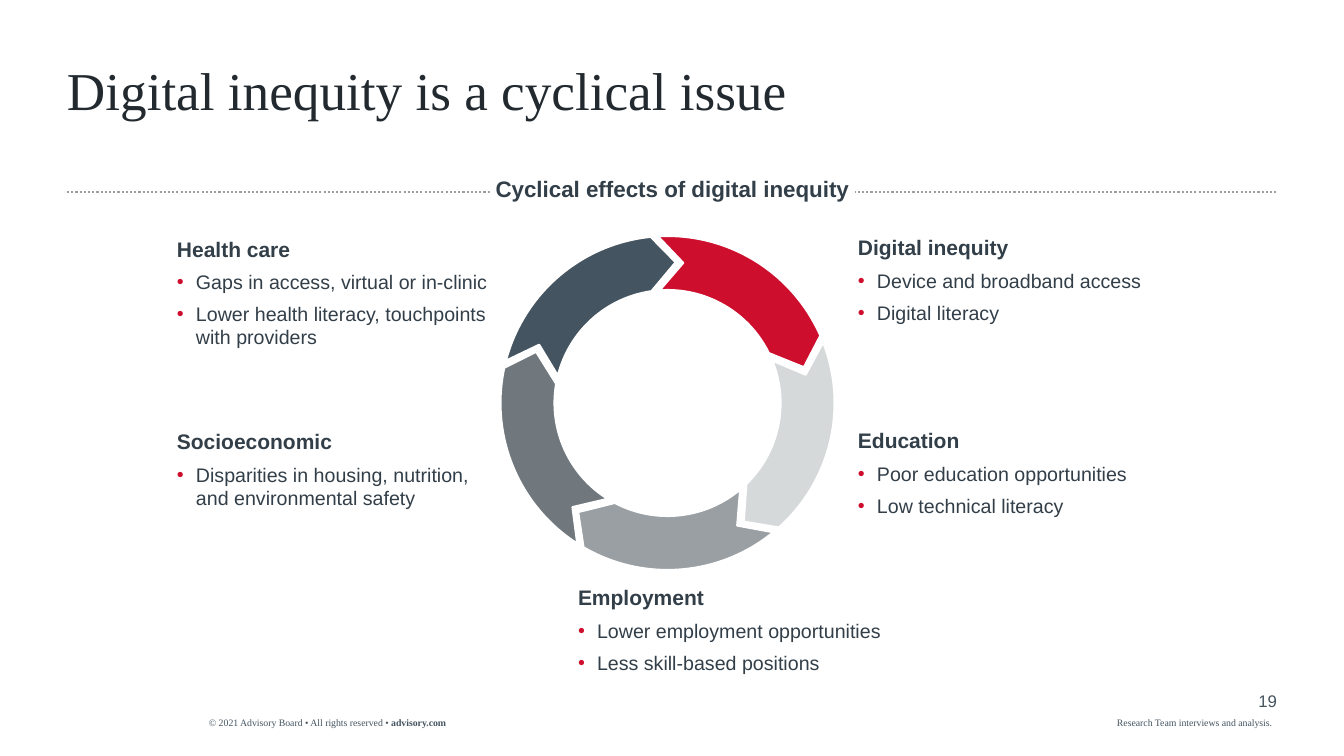
from math import cos, radians, sin, tan

from lxml.etree import SubElement
from pptx import Presentation
from pptx.dml.color import RGBColor
from pptx.enum.dml import MSO_LINE_DASH_STYLE as Dash
from pptx.enum.shapes import MSO_CONNECTOR as Connector, MSO_SHAPE as Shape
from pptx.enum.text import MSO_ANCHOR as Anchor, MSO_AUTO_SIZE as AutoSize, PP_ALIGN as Align
from pptx.oxml.ns import qn
from pptx.util import Pt

# Content
TITLE = "Digital inequity is a cyclical issue"
HEADING = "Cyclical effects of digital inequity"
COPYRIGHT = [("© 2021 Advisory Board • All rights reserved • ", False), ("advisory.com", True)]
SOURCE = [("Research Team interviews and analysis.", False)]
PAGE = [("19", False)]

# Stages clockwise from the top: name, colour, (left, top, width, height), effects
STAGES = [
    ("Digital inequity", "red", (858, 235, 305, 90),
     ["Device and broadband access", "Digital literacy"]),
    ("Education", "light", (858, 428, 311, 90),
     ["Poor education opportunities", "Low technical literacy"]),
    ("Employment", "mid", (578, 585, 336, 90),
     ["Lower employment opportunities", "Less skill-based positions"]),
    ("Socioeconomic", "dark", (177, 429, 314, 82),
     ["Disparities in housing, nutrition, and environmental safety"]),
    ("Health care", "slate", (177, 236, 334, 114),
     ["Gaps in access, virtual or in-clinic",
      "Lower health literacy, touchpoints with providers"]),
]

COLORS = {"red": "CE0E2D", "light": "D6D9DA", "mid": "999FA3", "dark": "70787E",
          "slate": "445460", "text": "323E48", "title": "222A30", "white": "FFFFFF"}
SANS, SERIF = "Arial", "Times New Roman"

# Ring geometry: px, and degrees clockwise from the top
CENTER_X, CENTER_Y = 667.5, 403
OUTER, MIDDLE, INNER = 167, 141, 113
TAIL = {"outer": -3.3, "notch": 6.4, "inner": -4}
HEAD = {"outer": 66.2, "tip": 75.3, "inner": 63.8}
RING_ROTATION = 142.7

PX = 914400 / 100.8


def px(*lengths):
    return [round(length * PX) for length in lengths]


def color(name):
    return RGBColor.from_string(COLORS[name])


def set_frame(frame, anchor=Anchor.TOP, auto_size=AutoSize.SHAPE_TO_FIT_TEXT):
    settings = {"margin_left": 0, "margin_right": 0, "margin_top": 0, "margin_bottom": 0,
                "word_wrap": True, "auto_size": auto_size, "vertical_anchor": anchor}
    for key, value in settings.items():
        setattr(frame, key, value)


def add_run(paragraph, text, size, font, ink, bold=False):
    run = paragraph.add_run()
    run.text = text
    for key, value in {"size": Pt(size), "name": font, "bold": bold}.items():
        setattr(run.font, key, value)
    run.font.color.rgb = color(ink)


def add_bullet(paragraph):
    properties = paragraph._p.get_or_add_pPr()
    indent = px(19)[0]
    properties.set("marL", str(indent))
    properties.set("indent", str(-indent))
    bullet_color = SubElement(properties, qn("a:buClr"))
    SubElement(bullet_color, qn("a:srgbClr"), val=COLORS["red"])
    SubElement(properties, qn("a:buFont"), typeface=SANS)
    SubElement(properties, qn("a:buChar"), char="•")


def add_box(slide, box):
    frame = slide.shapes.add_textbox(*px(*box)).text_frame
    set_frame(frame)
    return frame


def add_small_text(slide, box, runs, size, font, align=Align.LEFT):
    paragraph = add_box(slide, box).paragraphs[0]
    paragraph.alignment = align
    for text, bold in runs:
        add_run(paragraph, text, size, font, "slate", bold)


def add_stage_text(slide, name, box, effects):
    frame = add_box(slide, box)
    add_run(frame.paragraphs[0], name, 15, SANS, "text", True)
    for effect in effects:
        paragraph = frame.add_paragraph()
        paragraph.space_before = Pt(6)
        add_bullet(paragraph)
        add_run(paragraph, effect, 14, SANS, "text")


def ring_point(radius, angle):
    turn = radians(angle)
    return px(CENTER_X + radius * sin(turn), CENTER_Y - radius * cos(turn))


def arc_points(radius, start, end, steps=36):
    return [ring_point(radius, start + (end - start) * i / steps) for i in range(steps + 1)]


def arc_curve(radius, start, end):
    """Control points and end point of one cubic curve along an arc."""
    reach = 4 / 3 * tan(radians(end - start) / 4)
    points = []
    for angle, sign in ((start, 1), (end, -1)):
        x, y = ring_point(radius, angle)
        along = px(radius * reach * sign)[0]
        points.append((x + along * cos(radians(angle)), y + along * sin(radians(angle))))
    return points + [ring_point(radius, end)]


def add_ring_arrow(slide, turn, fill):
    base = turn - RING_ROTATION
    outer = (OUTER, base + TAIL["outer"], base + HEAD["outer"])
    inner = (INNER, base + HEAD["inner"], base + TAIL["inner"])
    tip = ring_point(MIDDLE, base + HEAD["tip"])
    notch = ring_point(MIDDLE, base + TAIL["notch"])

    # Sampled arcs settle the frame, then curves take their place
    frame_points = arc_points(*outer) + [tip] + arc_points(*inner) + [notch]
    builder = slide.shapes.build_freeform(*frame_points[0])
    builder.add_line_segments(frame_points[1:], close=True)
    arrow = builder.convert_to_shape()
    outline = next(arrow._element.iter(qn("a:path")))
    for step in list(outline):
        outline.remove(step)
    for tag, points in [("moveTo", [ring_point(*outer[:2])]), ("cubicBezTo", arc_curve(*outer)),
                        ("lnTo", [tip]), ("lnTo", [ring_point(*inner[:2])]),
                        ("cubicBezTo", arc_curve(*inner)), ("lnTo", [notch]), ("close", [])]:
        step = SubElement(outline, qn(f"a:{tag}"))
        for x, y in points:
            SubElement(step, qn("a:pt"), x=str(round(x - arrow.left)), y=str(round(y - arrow.top)))

    # Turn the arrow around the ring centre
    center_x, center_y = px(CENTER_X, CENTER_Y)
    dx = arrow.left + arrow.width / 2 - center_x
    dy = arrow.top + arrow.height / 2 - center_y
    c, s = cos(radians(RING_ROTATION)), sin(radians(RING_ROTATION))
    arrow.left = round(center_x + dx * c - dy * s - arrow.width / 2)
    arrow.top = round(center_y + dx * s + dy * c - arrow.height / 2)
    arrow.rotation = RING_ROTATION

    arrow.shadow.inherit = False
    arrow.fill.solid()
    arrow.fill.fore_color.rgb = color(fill)
    arrow.line.color.rgb = color("white")
    arrow.line.width = Pt(1.5)


def main():
    deck = Presentation()
    deck.slide_width, deck.slide_height = px(1344, 756)
    slide = deck.slides.add_slide(deck.slide_layouts[5])

    # Title
    title = slide.shapes.title
    title.left, title.top, title.width, title.height = px(67, 65, 1210, 59)
    set_frame(title.text_frame)
    title_line = title.text_frame.paragraphs[0]
    title_line.alignment = Align.LEFT
    title_line.line_spacing = 0.9
    add_run(title_line, TITLE, 38, SERIF, "title")

    # Footer
    add_small_text(slide, (209, 717, 329, 12), COPYRIGHT, 7, SERIF)
    add_small_text(slide, (1117, 717, 160, 12), SOURCE, 7, SERIF)
    add_small_text(slide, (1227, 691, 50, 20), PAGE, 12, SANS, Align.RIGHT)

    # Dotted rule with the heading on it
    rule = slide.shapes.add_connector(Connector.STRAIGHT, *px(67, 192, 1276, 192))
    rule.line.color.rgb = color("mid")
    rule.line.width = Pt(1.5)
    rule.line.dash_style = Dash.ROUND_DOT
    SubElement(rule._element.spPr, qn("a:effectLst"))

    heading = slide.shapes.add_shape(Shape.RECTANGLE, *px(490, 175, 365, 27))
    heading.shadow.inherit = False
    heading.fill.solid()
    heading.fill.fore_color.rgb = color("white")
    heading.line.fill.background()
    set_frame(heading.text_frame, Anchor.MIDDLE)
    heading_line = heading.text_frame.paragraphs[0]
    heading_line.alignment = Align.CENTER
    add_run(heading_line, HEADING, 16, SANS, "text", True)

    # Cycle: one arrow and one text block per stage
    for i, (name, fill, box, effects) in enumerate(STAGES):
        add_ring_arrow(slide, i * 360 / len(STAGES), fill)
        add_stage_text(slide, name, box, effects)

    deck.save("out.pptx")


if __name__ == "__main__":
    main()
